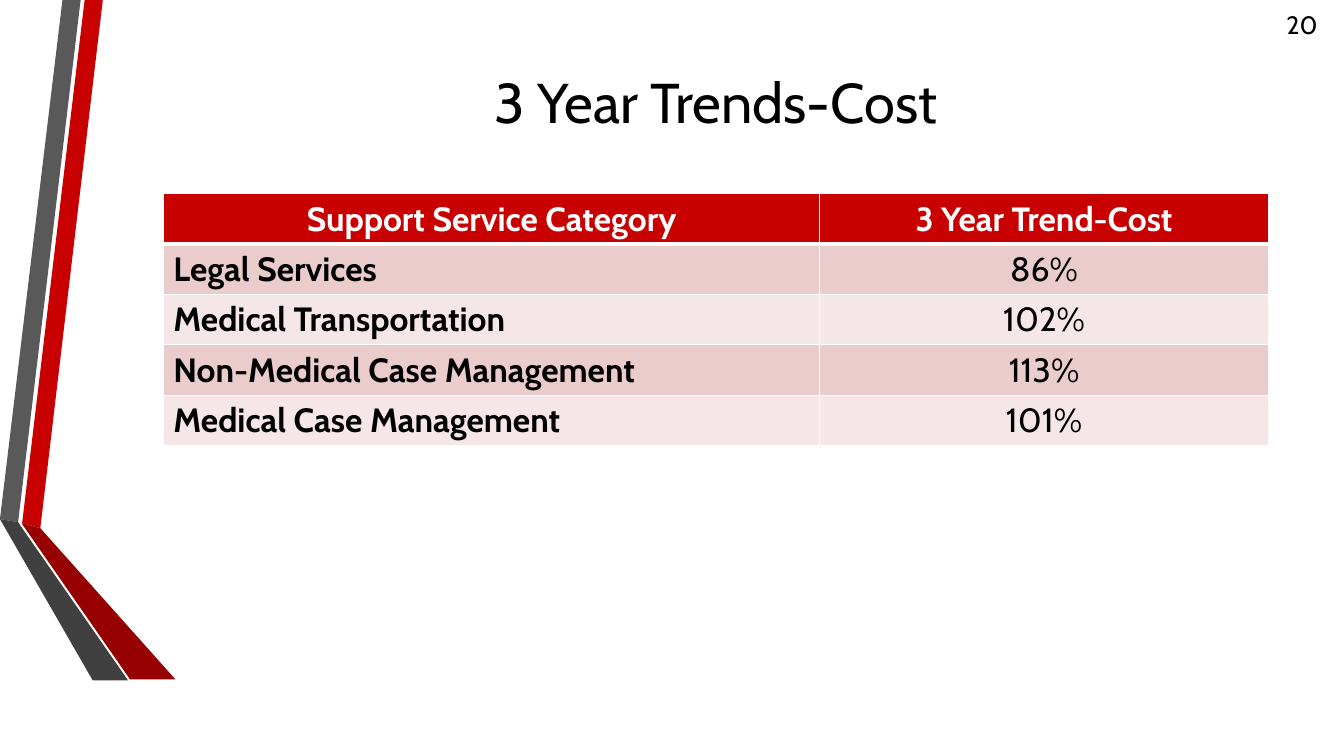
from dataclasses import dataclass

from lxml import etree
from pptx import Presentation
from pptx import util as u
from pptx.dml.color import RGBColor
from pptx.enum import text
from pptx.oxml.ns import qn

PX = 9144  # EMU in one px, 100 px to the inch


@dataclass(frozen=True)
class Theme:
    font: str = "Cabin"
    black: str = "000000"
    white: str = "FFFFFF"
    red: str = "C80000"
    dark_red: str = "960000"
    gray: str = "595959"
    dark_gray: str = "404040"
    bands: tuple = ("EBCCCC", "F5E7E7")
    title_size: int = 40
    table_size: int = 24
    number_size: int = 18


T = Theme()

RIBBONS = [
    (T.red, [(22, 519), (40, 524), (102, 0), (84, 0)]),
    (T.gray, [(80, 0), (62, 0), (0, 515), (18, 518)]),
    (T.dark_red, [(22, 520), (129, 674), (174, 674), (40, 524), (22, 519)]),
    (T.dark_gray, [(127, 675), (22, 524), (18, 518), (0, 515), (92, 675)]),
]

ROWS = [
    ("Support Service Category", "3 Year Trend-Cost"),
    ("Legal Services", "86%"),
    ("Medical Transportation", "102%"),
    ("Non-Medical Case Management", "113%"),
    ("Medical Case Management", "101%"),
]
COLUMN_WIDTHS = (651, 445)
ROW_HEIGHT = 49


def px(*lengths):
    return [u.Emu(n * PX) for n in lengths]


def write(tf, words, size, color=T.black, bold=False, align=text.PP_ALIGN.LEFT):
    p = tf.paragraphs[0]
    p.alignment = align
    r = p.add_run()
    r.text = words
    r.font.name = T.font
    r.font.size = u.Pt(size)
    r.font.bold = bold
    r.font.color.rgb = RGBColor.from_string(color)


def add_text(s, box, words, size, anchor=text.MSO_ANCHOR.TOP, **fmt):
    tf = s.shapes.add_textbox(*px(*box)).text_frame
    tf.word_wrap = True
    tf.vertical_anchor = anchor
    write(tf, words, size, **fmt)


def add_ribbon(s, color, points):
    builder = s.shapes.build_freeform(*points[0], scale=PX)
    builder.add_line_segments(points[1:], close=True)
    sp = builder.convert_to_shape()
    sp.shadow.inherit = False
    sp.fill.solid()
    sp.fill.fore_color.rgb = RGBColor.from_string(color)
    sp.line.fill.background()


def set_borders(cell, **widths):
    tc_pr = cell._tc.get_or_add_tcPr()
    for side in ("L", "R", "T", "B"):
        ln = etree.SubElement(tc_pr, qn(f"a:ln{side}"), w=str(u.Pt(widths.get(side, 1))))
        fill = etree.SubElement(ln, qn("a:solidFill"))
        etree.SubElement(fill, qn("a:srgbClr"), val=T.white)


def add_trend_table(s, left, top):
    box = px(left, top, sum(COLUMN_WIDTHS), ROW_HEIGHT * len(ROWS))
    table = s.shapes.add_table(len(ROWS), len(COLUMN_WIDTHS), *box).table
    for column, width in zip(table.columns, px(*COLUMN_WIDTHS)):
        column.width = width
    for i, values in enumerate(ROWS):
        header = i == 0
        fill = T.red if header else T.bands[(i - 1) % 2]
        for j, value in enumerate(values):
            cell = table.cell(i, j)
            # The heavy rule under the header is shared with the first body row
            set_borders(cell, B=3 if header else 1, T=3 if i == 1 else 1)
            cell.fill.solid()
            cell.fill.fore_color.rgb = RGBColor.from_string(fill)
            centered = header or j > 0
            write(cell.text_frame, value, T.table_size,
                  color=T.white if header else T.black,
                  bold=header or j == 0,
                  align=text.PP_ALIGN.CENTER if centered else text.PP_ALIGN.LEFT)


def main():
    prs = Presentation()
    prs.slide_width, prs.slide_height = px(1333, 750)
    s = prs.slides.add_slide(prs.slide_layouts[6])

    # Folded ribbons on the left edge
    for color, points in RIBBONS:
        add_ribbon(s, color, points)

    # Page number and title
    add_text(s, (1266, 4, 67, 40), "20", T.number_size)
    add_text(s, (162, 4, 1096, 192), "3 Year Trends-Cost", T.title_size,
             anchor=text.MSO_ANCHOR.MIDDLE, align=text.PP_ALIGN.CENTER)

    # Cost trends by service category
    add_trend_table(s, 162, 192)

    prs.save("out.pptx")


if __name__ == "__main__":
    main()
